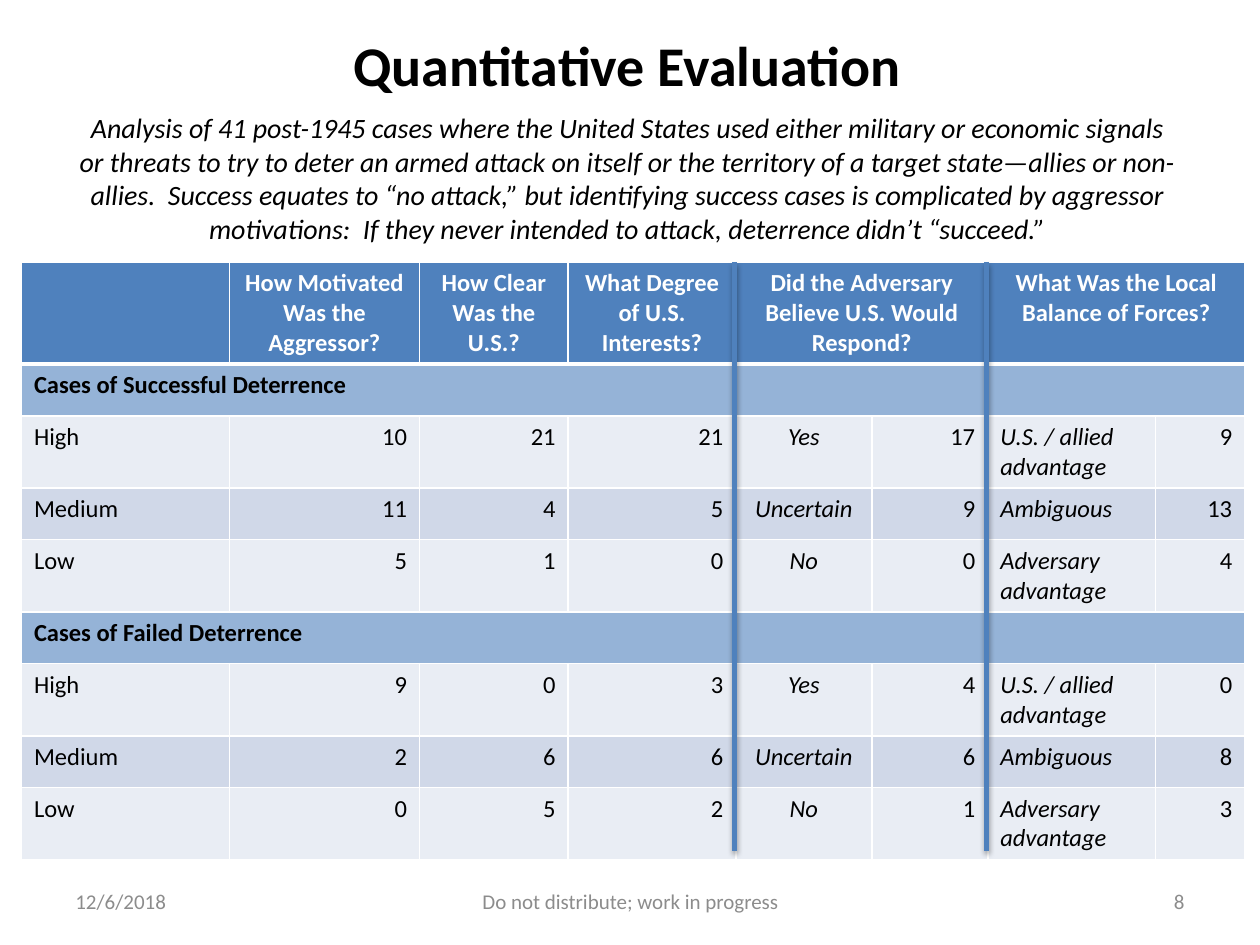
from typing import NamedTuple

from lxml import etree
from pptx import Presentation
from pptx.dml.color import RGBColor
from pptx.enum.shapes import MSO_CONNECTOR
from pptx.enum.text import MSO_ANCHOR, PP_ALIGN
from pptx.oxml.ns import qn
from pptx.util import Inches, Pt

LEFT, MID, RIGHT = PP_ALIGN.LEFT, PP_ALIGN.CENTER, PP_ALIGN.RIGHT
TOP, CENTER = MSO_ANCHOR.TOP, MSO_ANCHOR.MIDDLE
STRAIGHT = MSO_CONNECTOR.STRAIGHT

BLACK = RGBColor(0x00, 0x00, 0x00)
WHITE = RGBColor(0xFF, 0xFF, 0xFF)
GRAY = RGBColor(0x8C, 0x8C, 0x8C)
BLUE = RGBColor(0x4F, 0x81, 0xBD)
BAND = RGBColor(0x95, 0xB3, 0xD7)
PALE = RGBColor(0xE9, 0xED, 0xF4)
DUSK = RGBColor(0xD0, 0xD8, 0xE8)


class Style(NamedTuple):
    size: float
    color: RGBColor = BLACK
    align: int = LEFT
    bold: bool = False
    italic: bool = False


class Label(NamedTuple):
    text: str
    box: tuple
    style: Style
    anchor: int = CENTER


class Group(NamedTuple):
    title: str
    counts: tuple


INTRO = (
    "Analysis of 41 post-1945 cases where the United States used either military "
    "or economic signals or threats to try to deter an armed attack on itself or "
    "the territory of a target state—allies or non-allies.  Success equates to "
    "“no attack,” but identifying success cases is complicated by aggressor "
    "motivations:  If they never intended to attack, deterrence didn’t “succeed.”"
)
LABELS = (
    Label("Quantitative Evaluation", (0.48, 0.12, 9, 0.78),
          Style(32, align=MID, bold=True)),
    Label("12/6/2018", (0.5, 6.95, 2.33, 0.4), Style(12, GRAY)),
    Label("Do not distribute; work in progress", (3.42, 6.95, 3.17, 0.4),
          Style(12, GRAY, MID)),
    Label("8", (7.17, 6.95, 2.33, 0.4), Style(12, GRAY, RIGHT)),
    Label(INTRO, (0.52, 0.83, 8.92, 1.18), Style(16, align=MID, italic=True), TOP),
)

# Table content: each group has one row of counts per level
WIDTHS = (1.65, 1.51, 1.18, 1.33, 1.08, 0.92, 1.33, 0.71)
ROW = 0.41
HEADS = (
    "", "How Motivated Was the Aggressor?", "How Clear Was the U.S.?",
    "What Degree of U.S. Interests?",
    "Did the Adversary Believe U.S. Would Respond?", "",
    "What Was the Local Balance of Forces?", "",
)
LEVELS = (
    ("High", "Yes", "U.S. / allied advantage", PALE),
    ("Medium", "Uncertain", "Ambiguous", DUSK),
    ("Low", "No", "Adversary advantage", PALE),
)
GROUPS = (
    Group("Cases of Successful Deterrence",
          ((10, 21, 21, 17, 9), (11, 4, 5, 9, 13), (5, 1, 0, 0, 4))),
    Group("Cases of Failed Deterrence",
          ((9, 0, 3, 4, 0), (2, 6, 6, 6, 8), (0, 5, 2, 1, 3))),
)
HEAD = Style(14, WHITE, MID, bold=True)
TITLE = Style(14, bold=True)
LEVEL = Style(14)
COUNT = Style(14, align=RIGHT)
BELIEF = Style(14, align=MID, italic=True)
FORCE = Style(14, italic=True)
BODY = (LEVEL, COUNT, COUNT, COUNT, BELIEF, COUNT, FORCE, COUNT)


def write(frame, text: str, style: Style) -> None:
    frame.text = text
    para = frame.paragraphs[0]
    para.alignment = style.align
    for run in para.runs:
        font = run.font
        font.name, font.size = "Calibri", Pt(style.size)
        font.bold, font.italic = style.bold, style.italic
        font.color.rgb = style.color


def add_label(slide, label: Label) -> None:
    box = slide.shapes.add_textbox(*map(Inches, label.box))
    frame = box.text_frame
    frame.word_wrap = True
    frame.vertical_anchor = label.anchor
    write(frame, label.text, label.style)


def add_edges(cell, base: float) -> None:
    """Draw white cell borders; base is the width of the lower one."""
    props = cell._tc.get_or_add_tcPr()
    for spot, (side, width) in enumerate(
            (("L", 1), ("R", 1), ("T", 1), ("B", base))):
        line = etree.Element(qn(f"a:ln{side}"), w=str(Pt(width)))
        fill = etree.SubElement(line, qn("a:solidFill"))
        etree.SubElement(fill, qn("a:srgbClr"), val=str(WHITE))
        props.insert(spot, line)


def fill_row(table, row: int, texts: tuple, styles: tuple,
             color: RGBColor, base: float = 1) -> None:
    for col, (text, style) in enumerate(zip(texts, styles)):
        cell = table.cell(row, col)
        cell.fill.solid()
        cell.fill.fore_color.rgb = color
        add_edges(cell, base)
        write(cell.text_frame, text, style)


def add_grid(slide) -> None:
    count = 1 + sum(1 + len(group.counts) for group in GROUPS)
    table = slide.shapes.add_table(
        count, len(WIDTHS), Inches(0.17), Inches(2.08),
        Inches(sum(WIDTHS)), Inches(ROW * count)).table
    for col, width in zip(table.columns, WIDTHS):
        col.width = Inches(width)
    for line in table.rows:
        line.height = Inches(ROW)

    # Header
    fill_row(table, 0, HEADS, (HEAD,) * 8, BLUE, 3)
    for col in (4, 6):
        table.cell(0, col).merge(table.cell(0, col + 1))

    # Groups
    row = 1
    for group in GROUPS:
        fill_row(table, row, (group.title,) + ("",) * 7, (TITLE,) * 8, BAND)
        table.cell(row, 0).merge(table.cell(row, 7))
        for (level, belief, force, color), counts in zip(LEVELS, group.counts):
            row += 1
            *first, reply, local = map(str, counts)
            texts = (level, *first, belief, reply, force, local)
            fill_row(table, row, texts, BODY, color)
        row += 1


def add_rule(slide, left: float) -> None:
    rule = slide.shapes.add_connector(
        STRAIGHT, Inches(left), Inches(2.08), Inches(left), Inches(6.75))
    rule.line.color.rgb = BLUE
    rule.line.width = Pt(3)
    # Soft shadow below the line
    effect = etree.SubElement(rule._element.spPr, qn("a:effectLst"))
    shade = etree.SubElement(
        effect, qn("a:outerShdw"), blurRad=str(Pt(3.1)), dist=str(Pt(1.8)),
        dir="5400000", rotWithShape="0")
    color = etree.SubElement(shade, qn("a:srgbClr"), val=str(BLACK))
    etree.SubElement(color, qn("a:alpha"), val="35000")


def main() -> None:
    deck = Presentation()
    deck.slide_width, deck.slide_height = Inches(10), Inches(7.5)
    slide = deck.slides.add_slide(deck.slide_layouts[6])
    add_grid(slide)
    for label in LABELS:
        add_label(slide, label)
    for left in (5.83, 7.83):
        add_rule(slide, left)
    deck.save("out.pptx")


if __name__ == "__main__":
    main()
